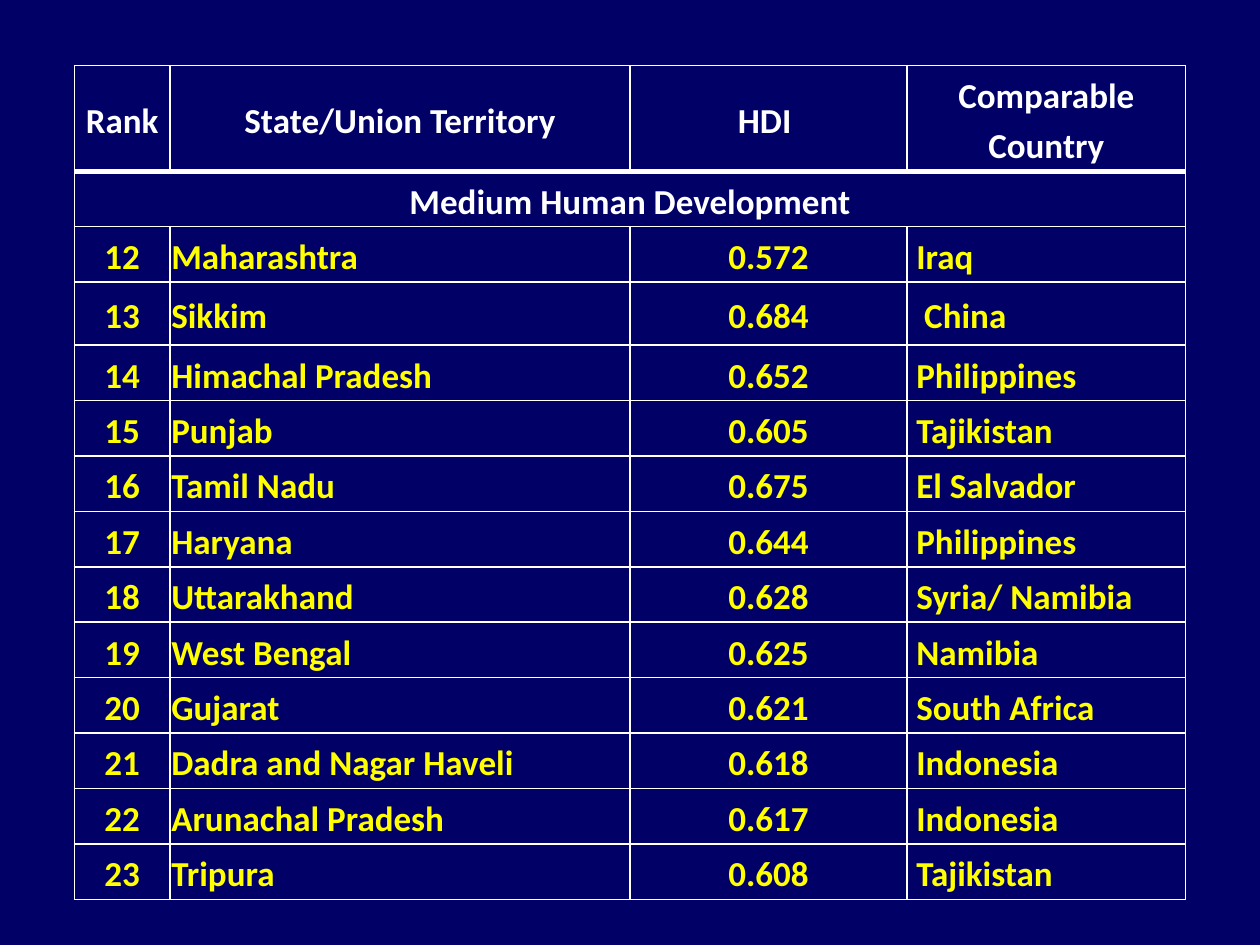
"""Build a slide with a table of Indian states ranked by medium human development."""
import pptx
import pptx.dml.color
import pptx.enum.text
import pptx.oxml
import pptx.oxml.ns
import pptx.util

NAVY = pptx.dml.color.RGBColor(0x00, 0x00, 0x66)
WHITE = pptx.dml.color.RGBColor(0xFF, 0xFF, 0xFF)
YELLOW = pptx.dml.color.RGBColor(0xFF, 0xFF, 0x00)
CENTER = pptx.enum.text.PP_ALIGN.CENTER
LEFT = pptx.enum.text.PP_ALIGN.LEFT
MIDDLE = pptx.enum.text.MSO_ANCHOR.MIDDLE

HEADINGS = ("Rank", "State/Union Territory", "HDI ", "Comparable Country")
STATES = (
    ("Maharashtra", "0.572", "Iraq"),
    ("Sikkim", "0.684", " China"),
    ("Himachal Pradesh", "0.652", "Philippines"),
    ("Punjab", "0.605", "Tajikistan"),
    ("Tamil Nadu", "0.675", "El Salvador"),
    ("Haryana", "0.644", "Philippines"),
    ("Uttarakhand", "0.628", "Syria/ Namibia"),
    ("West Bengal", "0.625", "Namibia"),
    ("Gujarat", "0.621", "South Africa"),
    ("Dadra and Nagar Haveli", "0.618", "Indonesia"),
    ("Arunachal Pradesh", "0.617", "Indonesia"),
    ("Tripura", "0.608", "Tajikistan"),
)
FIRST_RANK = 12
HARD_SPACE = chr(160)
COLUMN_WIDTHS = (0.76, 3.65, 2.2, 2.21)
ROW_HEIGHTS = (0.84, 0.44, 0.44, 0.5) + (0.44,) * 10
ALIGNMENTS = (CENTER, LEFT, CENTER, LEFT)
INSET = pptx.util.Inches(0.01)


def add_border(cell, side, points):
    """Draw one white side of a table cell."""
    cell._tc.get_or_add_tcPr().append(pptx.oxml.parse_xml(
        f'<a:ln{side} {pptx.oxml.ns.nsdecls("a")} w="{pptx.util.Pt(points)}">'
        f'<a:solidFill><a:srgbClr val="{WHITE}"/></a:solidFill></a:ln{side}>'))


deck = pptx.Presentation()
deck.slide_width = pptx.util.Inches(10)
deck.slide_height = pptx.util.Inches(7.5)
page = deck.slides.add_slide(deck.slide_layouts[6])
page.background.fill.solid()
page.background.fill.fore_color.rgb = NAVY

rows = [HEADINGS, ("Medium Human Development", "", "", "")]
for rank, (state, index, country) in enumerate(STATES, FIRST_RANK):
    rows.append((str(rank), state, index, HARD_SPACE + country))

table = page.shapes.add_table(
    len(rows), len(HEADINGS), pptx.util.Inches(0.59), pptx.util.Inches(0.52),
    pptx.util.Inches(sum(COLUMN_WIDTHS)), pptx.util.Inches(sum(ROW_HEIGHTS))).table
table.horz_banding = False
for column, width in zip(table.columns, COLUMN_WIDTHS):
    column.width = pptx.util.Inches(width)
for row, height in zip(table.rows, ROW_HEIGHTS):
    row.height = pptx.util.Inches(height)
table.cell(1, 0).merge(table.cell(1, len(HEADINGS) - 1))

for row_number, texts in enumerate(rows):
    is_heading = row_number < 2
    for column_number, text in enumerate(texts):
        cell = table.cell(row_number, column_number)
        cell.margin_left = cell.margin_right = INSET
        cell.margin_top = cell.margin_bottom = INSET
        cell.vertical_anchor = MIDDLE
        add_border(cell, "L", 1)
        add_border(cell, "R", 1)
        add_border(cell, "T", 3 if row_number == 1 else 1)
        add_border(cell, "B", 3 if row_number == 0 else 1)
        cell.fill.background()
        if cell.is_spanned:
            continue
        cell.text_frame.text = text
        para = cell.text_frame.paragraphs[0]
        para.alignment = CENTER if is_heading else ALIGNMENTS[column_number]
        para.line_spacing = 1.15
        font = para.runs[0].font
        font.name = "Calibri"
        font.size = pptx.util.Pt(20)
        font.bold = True
        font.color.rgb = WHITE if is_heading else YELLOW

deck.save("out.pptx")
